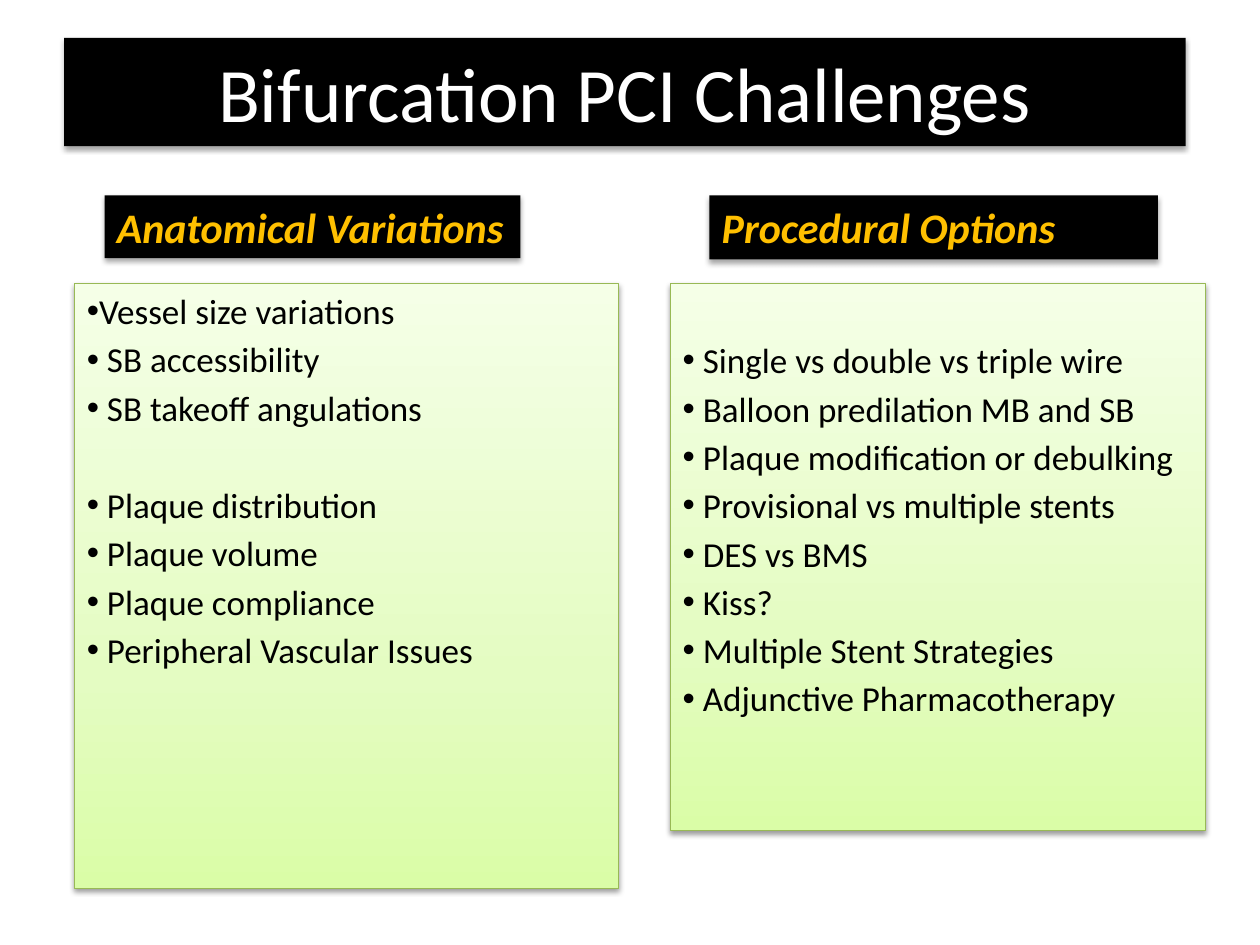
from lxml import etree
from pptx import Presentation
from pptx.dml.color import RGBColor
from pptx.enum.shapes import MSO_SHAPE as Shape
from pptx.enum.text import MSO_ANCHOR as Anchor, MSO_AUTO_SIZE as AutoSize, PP_ALIGN as Align
from pptx.oxml.ns import qn
from pptx.util import Inches, Pt


def color(code):
    return RGBColor.from_string(code)


def add_node(parent, tag, **attributes):
    node = etree.SubElement(parent, qn(tag))
    for name, value in attributes.items():
        node.set(name, str(value))
    return node


class ChallengeSlide:
    FONT = "Calibri"
    BLACK, WHITE, GOLD, GREEN = "000000", "FFFFFF", "FFC000", "98B955"
    GRADIENT = [(0, "DAFDA7"), (35, "E4FCC2"), (100, "F5FFE7")]
    LIST_SIZE, SPACE_BEFORE, LINE_PITCH = 20, 3.6, 28

    def __init__(self, deck):
        self.page = deck.slides.add_slide(deck.slide_layouts[6])

    def rectangle(self, left, top, width, height):
        box = self.page.shapes.add_shape(
            Shape.RECTANGLE, Inches(left), Inches(top), Inches(width), Inches(height))
        box.shadow.inherit = False
        box.text_frame.word_wrap = True
        return box

    def shadow(self, box, opacity, distance):
        effects = box._element.spPr.find(qn("a:effectLst"))
        outer = add_node(effects, "a:outerShdw", blurRad=Pt(3.1), dist=Pt(distance),
                         dir=90 * 60000, rotWithShape=0)
        shade = add_node(outer, "a:srgbClr", val=self.BLACK)
        add_node(shade, "a:alpha", val=opacity * 1000)

    def gradient(self, box):
        box.fill.gradient()
        box.fill.gradient_angle = 90
        stops = box._element.spPr.find(qn("a:gradFill")).find(qn("a:gsLst"))
        for stop in list(stops):
            stops.remove(stop)
        for position, code in self.GRADIENT:
            stop = add_node(stops, "a:gs", pos=position * 1000)
            add_node(stop, "a:srgbClr", val=code)

    def style(self, para, size, code, align=Align.LEFT, strong=False):
        para.alignment = align
        for span in para.runs:
            span.font.name = self.FONT
            span.font.size = Pt(size)
            span.font.color.rgb = color(code)
            span.font.bold = span.font.italic = strong

    def bar(self, text, place, size, code, align=Align.LEFT, strong=False):
        box = self.rectangle(*place)
        box.fill.solid()
        box.fill.fore_color.rgb = color(self.BLACK)
        box.line.fill.background()
        self.shadow(box, 35, 1.8)
        frame = box.text_frame
        frame.text = text
        frame.vertical_anchor = Anchor.MIDDLE
        self.style(frame.paragraphs[0], size, code, align, strong)
        return box

    def heading(self, text, place, wrap):
        frame = self.bar(text, place, 24, self.GOLD, strong=True).text_frame
        frame.vertical_anchor = Anchor.TOP
        frame.word_wrap = wrap
        frame.auto_size = AutoSize.SHAPE_TO_FIT_TEXT

    def bullet_panel(self, groups, place, skipped_lines=0):
        box = self.rectangle(*place)
        self.gradient(box)
        box.line.color.rgb = color(self.GREEN)
        box.line.width = Pt(0.75)
        self.shadow(box, 38, 1.6)
        frame = box.text_frame
        frame.vertical_anchor = Anchor.TOP
        frame.margin_top = Inches(0.05) + Pt(self.LINE_PITCH * skipped_lines)
        frame.text = "\n".join(item for group in groups for item in group)
        # Each group after the first starts one line lower
        starts = {sum(map(len, groups[:index])) for index in range(1, len(groups))}
        for index, para in enumerate(frame.paragraphs):
            self.style(para, self.LIST_SIZE, self.BLACK)
            gap = self.LINE_PITCH if index in starts else 0
            para.space_before = Pt(self.SPACE_BEFORE + gap)
            settings = para._p.get_or_add_pPr()
            add_node(add_node(settings, "a:buClr"), "a:srgbClr", val=self.BLACK)
            add_node(settings, "a:buFont", typeface="Arial")
            add_node(settings, "a:buChar", char="•")


def main():
    deck = Presentation()
    deck.slide_width, deck.slide_height = Inches(10), Inches(7.5)
    slide = ChallengeSlide(deck)

    # Title
    slide.bar("Bifurcation PCI Challenges", (0.51, 0.3, 8.9, 0.86), 44,
              slide.WHITE, Align.CENTER)

    # Bullet panels
    slide.bullet_panel([
        ["Vessel size variations", " SB accessibility", " SB takeoff angulations"],
        [" Plaque distribution", " Plaque volume", " Plaque compliance",
         " Peripheral Vascular Issues"],
    ], (0.59, 2.25, 4.32, 4.8))
    slide.bullet_panel([[
        " Single vs double vs triple wire",
        " Balloon predilation MB and SB",
        " Plaque modification or debulking",
        " Provisional vs multiple stents",
        " DES vs BMS",
        " Kiss?",
        " Multiple Stent Strategies",
        " Adjunctive Pharmacotherapy",
    ]], (5.32, 2.25, 4.25, 4.34), skipped_lines=1)

    # Column headings
    slide.heading("Anatomical Variations", (0.83, 1.55, 3.3, 0.5), wrap=False)
    slide.heading("Procedural Options", (5.63, 1.55, 3.56, 0.51), wrap=True)

    deck.save("out.pptx")


if __name__ == "__main__":
    main()
